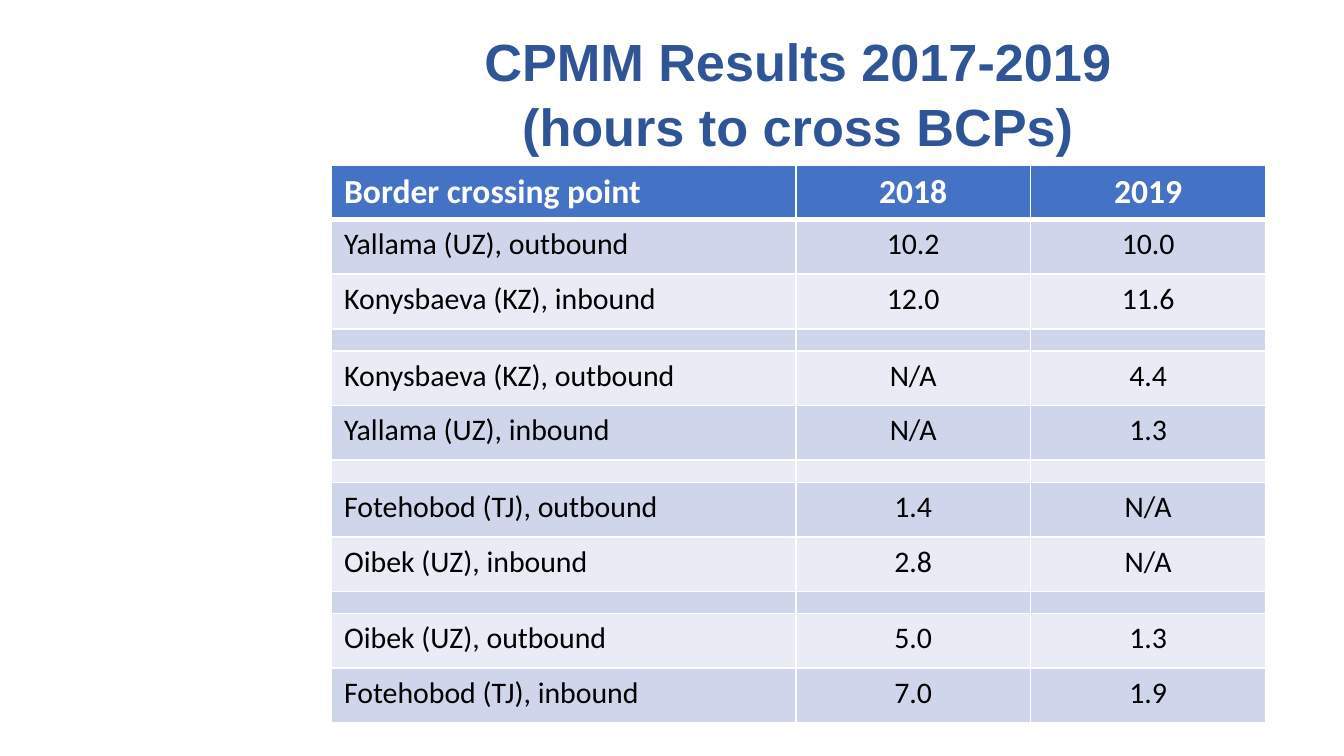
"""Build the slide of border crossing times."""
import lxml.etree
import pptx
import pptx.dml.color
import pptx.enum.text
import pptx.oxml.ns
import pptx.util

Cm = pptx.util.Cm
Pt = pptx.util.Pt
qn = pptx.oxml.ns.qn
align = pptx.enum.text.PP_ALIGN
hues = {"title": "2F5597", "head": "4472C4", "dark": "CFD5EA",
        "light": "E9EBF5", "text": "000000", "white": "FFFFFF"}
rows = [
    ("Border crossing point", "2018", "2019"),
    ("Yallama (UZ), outbound", "10.2", "10.0"),
    ("Konysbaeva (KZ), inbound", "12.0", "11.6"),
    ("", "", ""),
    ("Konysbaeva (KZ), outbound", "N/A", "4.4"),
    ("Yallama (UZ), inbound", "N/A", "1.3"),
    ("", "", ""),
    ("Fotehobod (TJ), outbound", "1.4", "N/A"),
    ("Oibek (UZ), inbound", "2.8", "N/A"),
    ("", "", ""),
    ("Oibek (UZ), outbound", "5.0", "1.3"),
    ("Fotehobod (TJ), inbound", "7.0", "1.9"),
]


def rgb(name):
    return pptx.dml.color.RGBColor.from_string(hues[name])


def edge(cell, side, width):
    props = cell._tc.get_or_add_tcPr()
    line = lxml.etree.SubElement(props, qn("a:" + side), w=str(Pt(width)))
    fill = lxml.etree.SubElement(line, qn("a:solidFill"))
    lxml.etree.SubElement(fill, qn("a:srgbClr"), val=hues["white"])


deck = pptx.Presentation()
deck.slide_width, deck.slide_height = Cm(25.4), Cm(14.28)
slide = deck.slides.add_slide(deck.slide_layouts[6])

title = slide.shapes.add_textbox(Cm(7.57), Cm(0.64), Cm(15.01), Cm(2.18))
frame = title.text_frame
frame.word_wrap = True
frame.vertical_anchor = pptx.enum.text.MSO_ANCHOR.MIDDLE
para = frame.paragraphs[0]
para.text = "CPMM Results 2017-2019 (hours to cross BCPs)"
para.alignment = align.CENTER
para.line_spacing = 1.05
para.font.name, para.font.size, para.font.bold = "Arial", Pt(28), True
para.font.color.rgb = rgb("title")

grid = slide.shapes.add_table(len(rows), 3, Cm(6.25), Cm(3.12),
                              Cm(17.67), Cm(10.53)).table
for col, width in zip(grid.columns, (8.79, 4.44, 4.44)):
    col.width = Cm(width)

for r, row in enumerate(rows):
    head = r == 0
    grid.rows[r].height = Cm(1.03 if row[0] else 0.42)
    for c, text in enumerate(row):
        cell = grid.cell(r, c)
        for side in ("lnL", "lnR", "lnT", "lnB"):
            thick = (head and side == "lnB") or (r == 1 and side == "lnT")
            edge(cell, side, 3 if thick else 1)
        cell.fill.solid()
        cell.fill.fore_color.rgb = rgb("head" if head else "dark" if r % 2 else "light")
        para = cell.text_frame.paragraphs[0]
        if not text:
            lxml.etree.SubElement(para._p, qn("a:endParaRPr"), sz="300")
            continue
        para.text = text
        para.alignment = align.CENTER if c else align.LEFT
        para.font.name, para.font.bold = "Calibri", head
        para.font.size = Pt(18 if head else 16)
        para.font.color.rgb = rgb("white" if head else "text")

deck.save("out.pptx")
